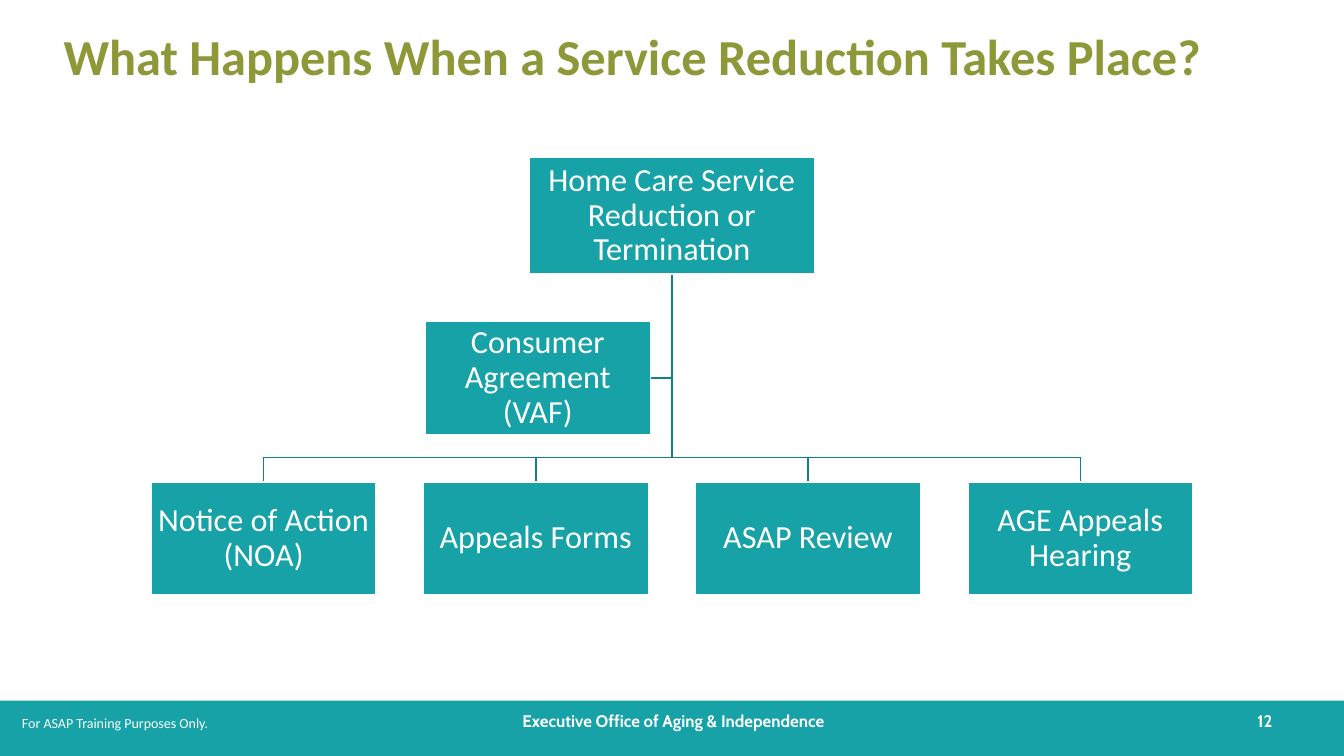
from dataclasses import dataclass

from lxml import etree
from pptx import Presentation
from pptx.dml.color import RGBColor
from pptx.enum.shapes import MSO_SHAPE
from pptx.enum.text import MSO_ANCHOR, MSO_AUTO_SIZE, PP_ALIGN
from pptx.oxml.ns import qn
from pptx.slide import Slide
from pptx.util import Inches, Pt

RECT = MSO_SHAPE.RECTANGLE
MIDDLE, TOP = MSO_ANCHOR.MIDDLE, MSO_ANCHOR.TOP
LEFT, CENTER, RIGHT = PP_ALIGN.LEFT, PP_ALIGN.CENTER, PP_ALIGN.RIGHT
NO_FIT = MSO_AUTO_SIZE.NONE

TEAL, DARK, OLIVE, WHITE = "16A2A7", "128286", "8E9838", "FFFFFF"
BOX_W, BOX_H = 2.23, 1.12
ROW_X, ROW_Y, STEP = 1.5, 4.78, 2.7
BUS_Y = 4.54


@dataclass
class Box:
    text: str
    x: float
    y: float
    w: float = BOX_W
    h: float = BOX_H

    @property
    def mid(self) -> float:
        return self.x + self.w / 2


@dataclass
class Label:
    text: str
    x: float
    y: float
    w: float
    h: float
    align: PP_ALIGN
    anchor: MSO_ANCHOR = MIDDLE
    size: float = 12
    face: str = "Cabin"
    bold: bool = True


ROOT = Box("Home Care Service Reduction or Termination", 5.25, 1.56, 2.83, 1.16)
SIDE = Box("Consumer Agreement (VAF)", 4.22, 3.19)
STEPS = ["Notice of Action (NOA)", "Appeals Forms", "ASAP Review", "AGE Appeals Hearing"]
ROW = [Box(text, ROW_X + i * STEP, ROW_Y) for i, text in enumerate(STEPS)]
LABELS = [
    Label("Executive Office of Aging & Independence", 4.43, 6.95, 4.5, 0.4, CENTER),
    Label("12", 12.21, 6.95, 0.51, 0.4, RIGHT),
    Label("For ASAP Training Purposes Only.", 0.12, 7.04, 3.67, 0.27, LEFT,
          TOP, 10, "Calibri", False),
]


def rgb(code: str) -> RGBColor:
    return RGBColor.from_string(code)


def write(frame, text: str, size: float, color: str, align: PP_ALIGN,
          face: str = "Calibri", bold: bool = False,
          anchor: MSO_ANCHOR = MIDDLE, inset: float | None = None) -> None:
    frame.word_wrap = True
    frame.auto_size = NO_FIT
    frame.vertical_anchor = anchor
    if inset is not None:
        frame.margin_left = frame.margin_right = Inches(inset)
        frame.margin_top = frame.margin_bottom = Inches(inset)
    frame.text = text
    para = frame.paragraphs[0]
    para.alignment = align
    font = para.font
    font.name, font.size, font.bold = face, Pt(size), bold
    font.color.rgb = rgb(color)


def add_rect(slide: Slide, x: float, y: float, w: float, h: float):
    shape = slide.shapes.add_shape(RECT, Inches(x), Inches(y), Inches(w), Inches(h))
    shape.shadow.inherit = False
    shape.fill.solid()
    shape.fill.fore_color.rgb = rgb(TEAL)
    shape.line.fill.background()
    return shape


def add_box(slide: Slide, box: Box) -> None:
    shape = add_rect(slide, box.x, box.y, box.w, box.h)
    shape.line.color.rgb = rgb(WHITE)
    shape.line.width = Pt(1)
    write(shape.text_frame, box.text, 23, WHITE, CENTER, inset=0.02)
    shape.text_frame.paragraphs[0].line_spacing = 0.9


def add_path(slide: Slide, points: list[tuple[float, float]]) -> None:
    """Draw an open, unfilled line through the points."""
    spots = [(Inches(x), Inches(y)) for x, y in points]
    pen = slide.shapes.build_freeform(*spots[0])
    pen.add_line_segments(spots[1:], close=False)
    shape = pen.convert_to_shape()
    shape.shadow.inherit = False
    shape.fill.background()
    shape.line.color.rgb = rgb(DARK)
    shape.line.width = Pt(1)
    # Square corners where the lines turn
    line = shape.line._get_or_add_ln()
    etree.SubElement(line, qn("a:miter"), lim="800000")


def add_label(slide: Slide, label: Label) -> None:
    area = slide.shapes.add_textbox(
        Inches(label.x), Inches(label.y), Inches(label.w), Inches(label.h))
    write(area.text_frame, label.text, label.size, WHITE, label.align,
          label.face, label.bold, label.anchor)


def add_title(slide: Slide) -> None:
    title = slide.shapes.title
    title.left, title.top = Inches(0.63), Inches(0.33)
    title.width, title.height = Inches(12.1), Inches(0.44)
    write(title.text_frame, "What Happens When a Service Reduction Takes Place?",
          36, OLIVE, LEFT, bold=True, inset=0)


def add_chart_tree(slide: Slide) -> None:
    start = (ROOT.mid, ROOT.y + ROOT.h)
    side_y = SIDE.y + SIDE.h / 2
    add_path(slide, [start, (ROOT.mid, side_y), (SIDE.x + SIDE.w, side_y)])
    for box in ROW:
        add_path(slide, [start, (ROOT.mid, BUS_Y), (box.mid, BUS_Y), (box.mid, box.y)])
    for box in [ROOT, *ROW, SIDE]:
        add_box(slide, box)


def main() -> None:
    deck = Presentation()
    deck.slide_width, deck.slide_height = Inches(13.33), Inches(7.5)
    slide = deck.slides.add_slide(deck.slide_layouts[5])
    add_rect(slide, 0, 6.95, 13.33, 0.55)
    add_title(slide)
    add_chart_tree(slide)
    for label in LABELS:
        add_label(slide, label)
    deck.save("out.pptx")


if __name__ == "__main__":
    main()
